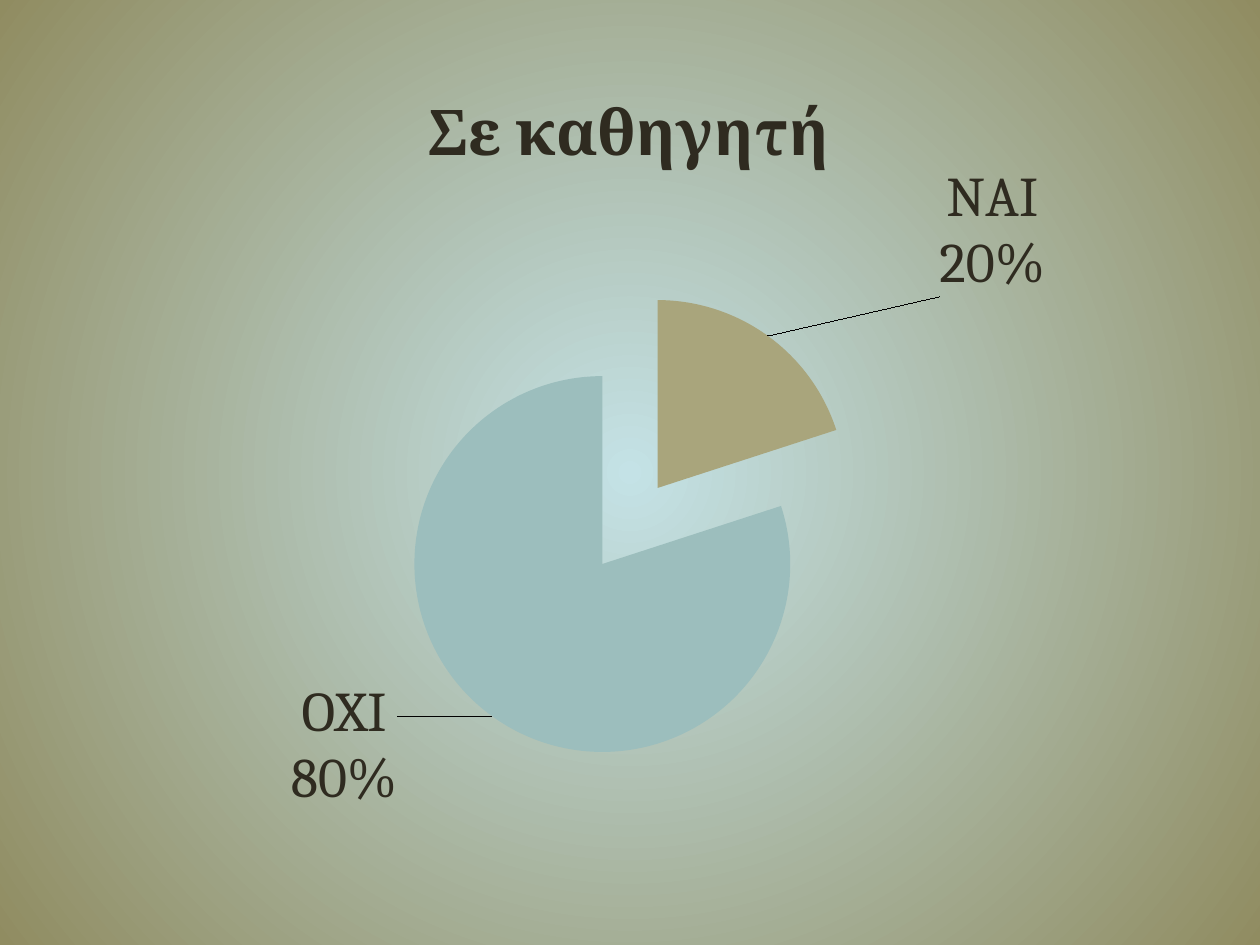
from dataclasses import dataclass

from pptx import Presentation
from pptx.chart.data import CategoryChartData
from pptx.dml.color import RGBColor as RGB
from pptx.enum.chart import XL_CHART_TYPE as CT, XL_LABEL_POSITION as LP
from pptx.oxml import parse_xml
from pptx.oxml.ns import nsdecls, qn
from pptx.util import Inches, Pt


@dataclass(frozen=True)
class Theme:
    glow: str = "C4E2E6"
    edge: str = "908C61"
    ink: str = "2F2B20"
    slices: tuple = ("A9A57C", "9CBEBD")
    heading: str = "Cambria"
    body: str = "Roboto"
    title_size: int = 36
    label_size: int = 32
    base_size: int = 10


T = Theme()
SLIDE_W, SLIDE_H = Inches(10), Inches(7.5)
CHART_BOX = (-0.01, 0.06, 1.02, 0.88)
PLOT_BOX = (0.317, 0.282, 0.366, 0.565)
LABEL_SHIFTS = ((0.13, -0.04), (-0.07, -0.05))
ANSWERS = {"NAI": 20, "OXI": 80}


def set_font(font, name, size, bold=False):
    for key, value in dict(name=name, size=Pt(size), bold=bold).items():
        setattr(font, key, value)
    font.color.rgb = RGB.from_string(T.ink)


def manual_layout(x, y, w=None, h=None):
    parts = ""
    if w is not None:
        parts = ('<c:layoutTarget val="inner"/><c:xMode val="edge"/>'
                 '<c:yMode val="edge"/>')
    parts += "".join(f'<c:{key} val="{value}"/>'
                     for key, value in zip("xywh", (x, y, w, h))
                     if value is not None)
    return parse_xml(f'<c:layout {nsdecls("c")}><c:manualLayout>{parts}'
                     '</c:manualLayout></c:layout>')


def paint_background(s):
    fill = s.background.fill
    fill.gradient()
    for stop, color, pos in zip(fill.gradient_stops, (T.glow, T.edge), (0, 1)):
        stop.color.rgb = RGB.from_string(color)
        stop.position = pos
    grad = s.background._cSld.find(".//" + qn("a:gradFill"))
    grad.replace(grad.find(qn("a:lin")), parse_xml(
        f'<a:path {nsdecls("a")} path="circle"><a:fillToRect l="50000" '
        't="50000" r="50000" b="50000"/></a:path>'))


def label_slices(series):
    labels = series.data_labels
    flags = dict(show_category_name=True, show_percentage=True,
                 show_value=False, show_legend_key=False,
                 number_format="0%", number_format_is_linked=False,
                 position=LP.OUTSIDE_END)
    for key, value in flags.items():
        setattr(labels, key, value)
    set_font(labels.font, T.heading, T.label_size)
    node = labels._element
    leader = node.find(qn("c:showLeaderLines"))
    if leader is None:
        leader = parse_xml(f'<c:showLeaderLines {nsdecls("c")}/>')
        node.append(leader)
    leader.set("val", "1")
    separator = f'<c:separator {nsdecls("c")}>\n</c:separator>'
    leader.addprevious(parse_xml(separator))
    for i, shift in enumerate(LABEL_SHIFTS):
        label = series.points[i].data_label
        label.position = LP.OUTSIDE_END
        set_font(label.font, T.heading, T.label_size)
        item = node.findall(qn("c:dLbl"))[i]
        item.find(qn("c:idx")).addnext(manual_layout(*shift))
        for tag, value in (("showVal", 0), ("showCatName", 1),
                           ("showPercent", 1), ("showLegendKey", 0)):
            item.find(qn("c:" + tag)).set("val", str(value))
        item.append(parse_xml(separator))


def add_answer_pie(s, box, title):
    x, y, w, h = box
    data = CategoryChartData()
    data.categories = list(ANSWERS)
    data.add_series("Series 1", list(ANSWERS.values()))
    chart = s.shapes.add_chart(
        CT.PIE, int(x * SLIDE_W), int(y * SLIDE_H),
        int(w * SLIDE_W), int(h * SLIDE_H), data).chart
    set_font(chart.font, T.body, T.base_size)
    chart.has_legend = False
    chart.has_title = True
    tf = chart.chart_title.text_frame
    tf.text = title
    set_font(tf.paragraphs[0].runs[0].font, T.heading, T.title_size, True)

    plot = chart.plots[0]
    plot.vary_by_categories = True
    series = plot.series[0]
    for i, color in enumerate(T.slices):
        fill = series.points[i].format.fill
        fill.solid()
        fill.fore_color.rgb = RGB.from_string(color)
    series._element.find(qn("c:dPt")).addprevious(
        parse_xml(f'<c:explosion {nsdecls("c")} val="25"/>'))
    label_slices(series)

    area = chart._chartSpace.chart.plotArea
    for old in area.findall(qn("c:layout")):
        area.remove(old)
    area.insert(0, manual_layout(*PLOT_BOX))


def main():
    prs = Presentation()
    prs.slide_width, prs.slide_height = SLIDE_W, SLIDE_H
    s = prs.slides.add_slide(prs.slide_layouts[6])
    paint_background(s)
    add_answer_pie(s, CHART_BOX, "Σε καθηγητή")
    prs.save("out.pptx")


if __name__ == "__main__":
    main()
